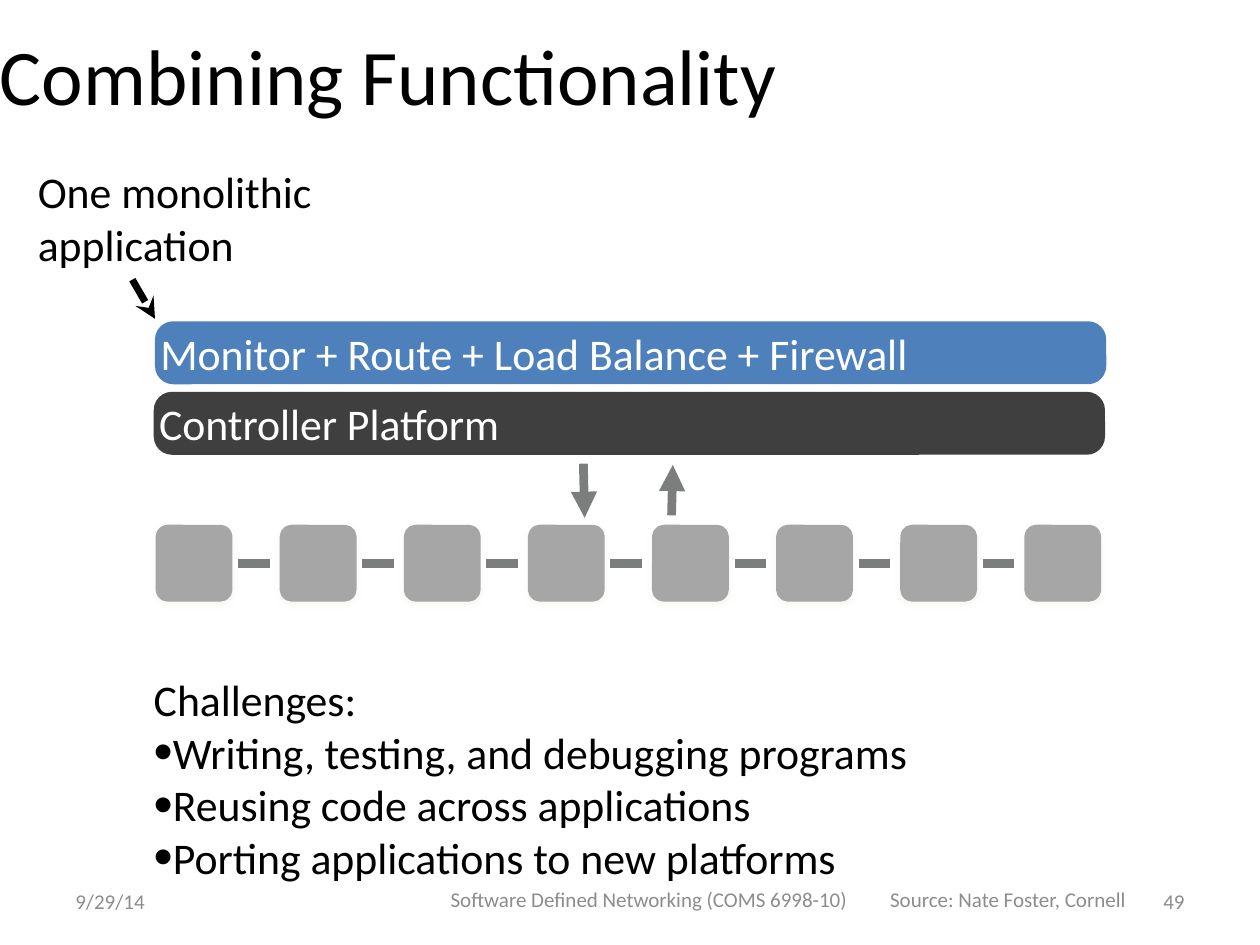
"""Build the Combining Functionality slide."""
from lxml import etree
from pptx import Presentation
from pptx.dml.color import RGBColor
from pptx.enum.shapes import MSO_CONNECTOR, MSO_SHAPE
from pptx.enum.text import MSO_ANCHOR as ANCHOR, PP_ALIGN as ALIGN
from pptx.oxml import parse_xml
from pptx.oxml.ns import nsdecls, qn
from pptx.util import Inches, Pt

BLACK = RGBColor(0x00, 0x00, 0x00)
WHITE = RGBColor(0xFF, 0xFF, 0xFF)
BLUE = RGBColor(0x4E, 0x81, 0xBC)
CHARCOAL = RGBColor(0x3F, 0x3F, 0x3F)
SWITCH_GRAY = RGBColor(0xA6, 0xA6, 0xA6)
LINK_GRAY = RGBColor(0x7C, 0x7E, 0x7E)
FOOTER_GRAY = RGBColor(0x8C, 0x8C, 0x8C)

SHADOW = (
    f'<a:outerShdw {nsdecls("a")} blurRad="38100" dist="20320" dir="5400000" rotWithShape="0">'
    '<a:srgbClr val="EEECE1"><a:alpha val="38000"/></a:srgbClr></a:outerShdw>'
)


def write(s, text, size, color, anchor=ANCHOR.MIDDLE, align=ALIGN.LEFT, inset=0):
    tf = s.text_frame
    tf.word_wrap = True
    tf.vertical_anchor = anchor
    tf.margin_left = tf.margin_right = Inches(inset)
    tf.margin_top = tf.margin_bottom = Inches(inset / 2)
    tf.text = text
    for p in tf.paragraphs:
        p.alignment = align
        for r in p.runs:
            r.font.name = "Calibri"
            r.font.size = Pt(size)
            r.font.color.rgb = color
    return tf


def connect(x1, y1, x2, y2, color, width, arrow=None):
    c = slide.shapes.add_connector(
        MSO_CONNECTOR.STRAIGHT, Inches(x1), Inches(y1), Inches(x2), Inches(y2)
    )
    c.line.color.rgb = color
    c.line.width = Pt(width)
    if arrow:
        etree.SubElement(c.line._get_or_add_ln(), qn("a:tailEnd"), type=arrow)
    etree.SubElement(c._element.spPr, qn("a:effectLst"))


prs = Presentation()
prs.slide_width = Inches(10)
prs.slide_height = Inches(7.5)
slide = prs.slides.add_slide(prs.slide_layouts[6])

bodies = [
    (0, 0.1, 10, 0.98, "Combining Functionality", 45),
    (0.3, 1.3, 2.29, 0.85, "One monolithic\napplication", 25),
    (1.22, 5.33, 7.55, 1.69,
     "Challenges:\nWriting, testing, and debugging programs\n"
     "Reusing code across applications\nPorting applications to new platforms", 25),
]
for x, y, w, h, text, size in bodies:
    s = slide.shapes.add_textbox(Inches(x), Inches(y), Inches(w), Inches(h))
    tf = write(s, text, size, BLACK)

for p in tf.paragraphs[1:]:
    pPr = p._p.get_or_add_pPr()
    pPr.set("marL", "0")
    pPr.set("indent", "0")
    etree.SubElement(etree.SubElement(pPr, qn("a:buClr")), qn("a:srgbClr"), val="000000")
    etree.SubElement(pPr, qn("a:buSzPct"), val="125000")
    etree.SubElement(pPr, qn("a:buFont"), typeface="Arial")
    etree.SubElement(pPr, qn("a:buChar"), char="•")

bars = [
    (1.22, 3.11, "Controller Platform", CHARCOAL),
    (1.23, 2.55, "Monitor + Route + Load Balance + Firewall", BLUE),
]
for x, y, text, color in bars:
    s = slide.shapes.add_shape(
        MSO_SHAPE.ROUNDED_RECTANGLE, Inches(x), Inches(y), Inches(7.55), Inches(0.5)
    )
    s.adjustments[0] = 0.29
    s.fill.solid()
    s.fill.fore_color.rgb = color
    s.line.fill.background()
    s.shadow.inherit = False
    write(s, text, 25, WHITE, ANCHOR.BOTTOM)

switches = 8
pitch = 0.985
for i in range(switches):
    x = 1.27 + i * pitch
    s = slide.shapes.add_shape(
        MSO_SHAPE.ROUNDED_RECTANGLE, Inches(x), Inches(4.2), Inches(0.54), Inches(0.54)
    )
    s.adjustments[0] = 0.11
    s.fill.solid()
    s.fill.fore_color.rgb = SWITCH_GRAY
    s.line.color.rgb = SWITCH_GRAY
    s.line.width = Pt(5)
    s.shadow.inherit = False
    s._element.spPr.find(qn("a:effectLst")).append(parse_xml(SHADOW))
    if i < switches - 1:
        connect(x + 0.62, 4.47, x + 0.87, 4.47, LINK_GRAY, 5)

connect(4.63, 3.68, 4.64, 4.11, LINK_GRAY, 5, "triangle")
connect(5.33, 4.09, 5.34, 3.69, LINK_GRAY, 5, "triangle")
connect(1.05, 2.22, 1.23, 2.53, BLACK, 4, "stealth")

footers = [
    (0.5, 6.95, 2.33, 0.4, "9/29/14", ALIGN.LEFT),
    (3.42, 6.92, 3.5, 0.43, "Software Defined Networking (COMS 6998-10) ", ALIGN.CENTER),
    (6.25, 6.92, 3.5, 0.43, "Source: Nate Foster, Cornell", ALIGN.CENTER),
    (7.17, 6.95, 2.33, 0.4, "49", ALIGN.RIGHT),
]
for x, y, w, h, text, align in footers:
    s = slide.shapes.add_textbox(Inches(x), Inches(y), Inches(w), Inches(h))
    write(s, text, 12, FOOTER_GRAY, align=align, inset=0.1)

prs.save("out.pptx")
